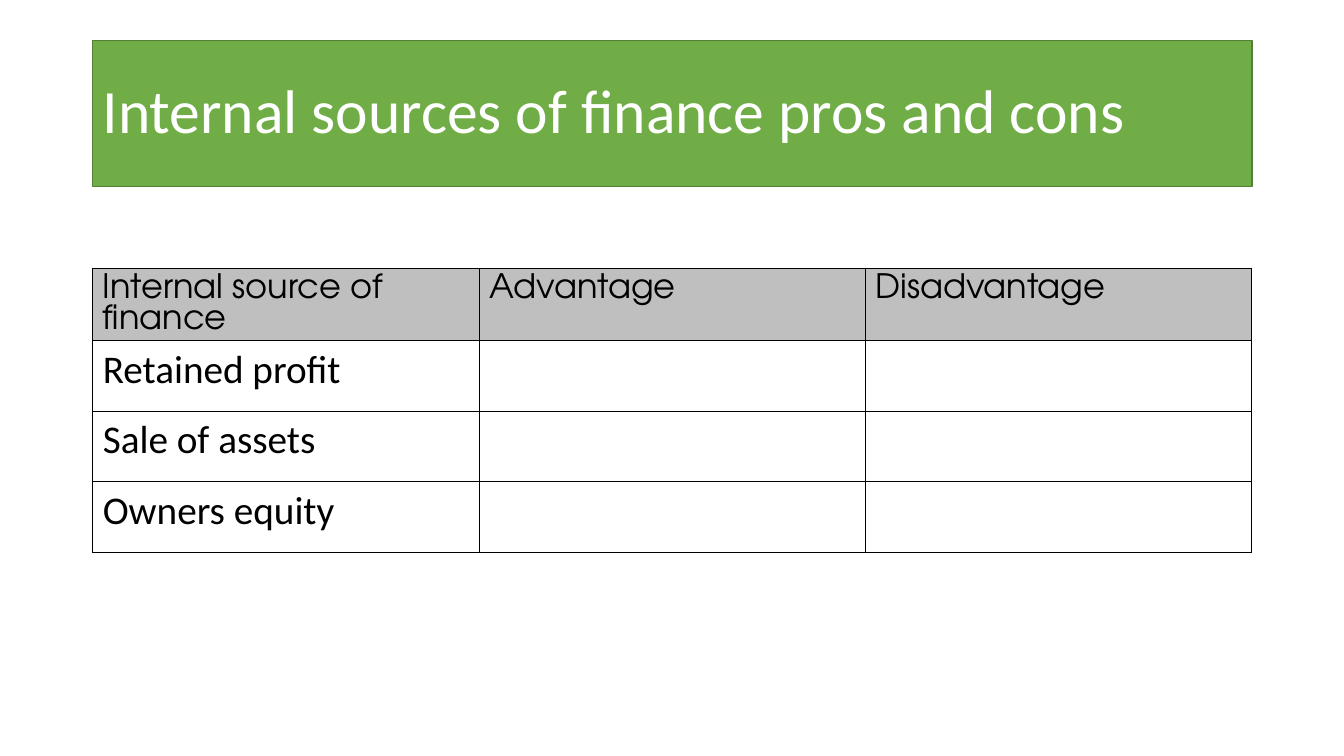
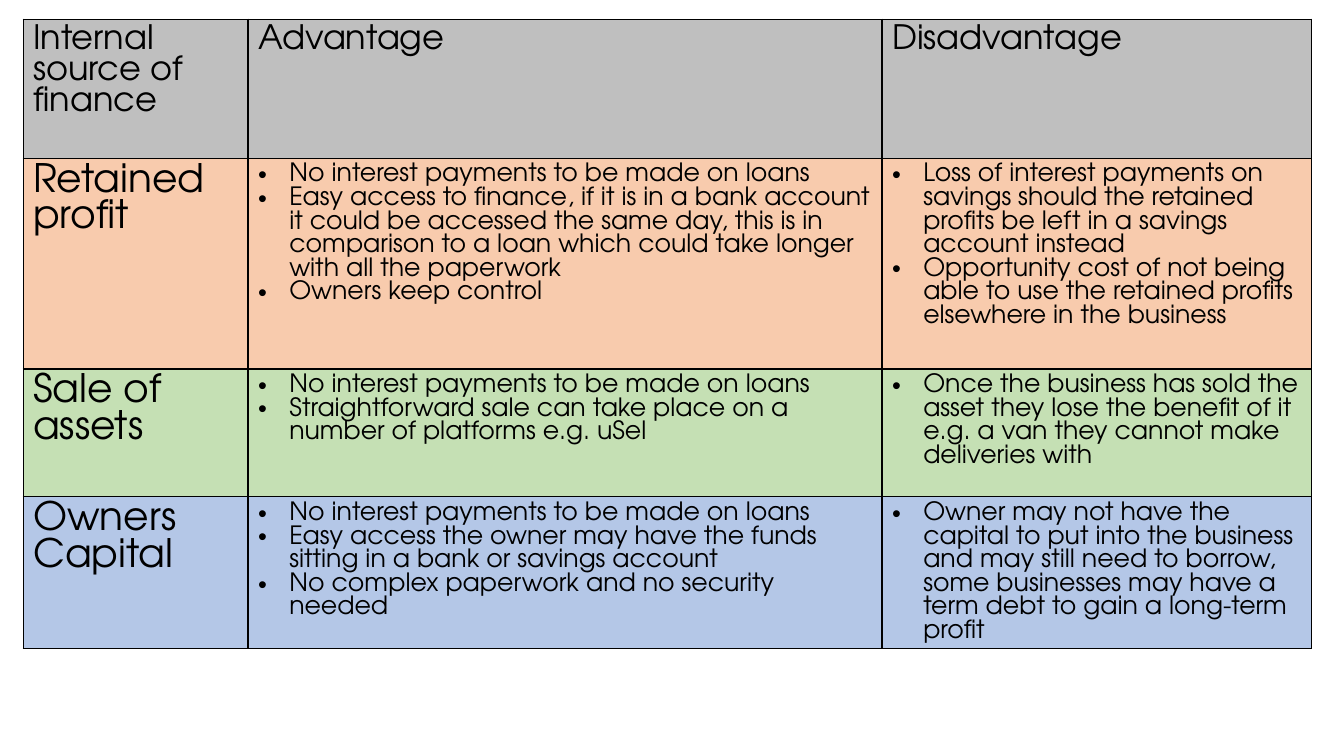
from lxml import etree
from pptx import Presentation
from pptx.dml.color import RGBColor
from pptx.enum import shapes, text
from pptx.oxml import ns
from pptx.util import Inches, Pt

GREEN = RGBColor(0x70, 0xAD, 0x47)
EDGE = RGBColor(0x53, 0x80, 0x35)
WHITE = RGBColor(0xFF, 0xFF, 0xFF)
BLACK = RGBColor(0x00, 0x00, 0x00)
GREY = RGBColor(0xBF, 0xBF, 0xBF)
PEACH = RGBColor(0xF8, 0xCB, 0xAD)
LIME = RGBColor(0xC5, 0xE0, 0xB4)
BLUE = RGBColor(0xB4, 0xC7, 0xE7)
PLAIN = "Calibri"
ROUND = "TeX Gyre Adventor"
HEAD = ["Internal source of finance", "Advantage", "Disadvantage"]
FREE = "No interest payments to be made on loans"


def write(para, words, size, font, color=BLACK):
    run = para.add_run()
    run.text = words
    run.font.size = Pt(size)
    run.font.name = font
    run.font.color.rgb = color


def grid(slide, left, top, cols, highs, rows, fills, font):
    """Add a bordered table; a list in a cell becomes bullets."""
    frame = slide.shapes.add_table(len(rows), len(cols), Inches(left), Inches(top),
                                   Inches(sum(cols)), Inches(sum(highs)))
    table = frame.table
    table.first_row = table.horz_banding = False
    for col, wide in zip(table.columns, cols):
        col.width = Inches(wide)
    for r, (row, high, fill) in enumerate(zip(rows, highs, fills)):
        table.rows[r].height = Inches(high)
        for c, item in enumerate(row):
            cell = table.cell(r, c)
            props = cell._tc.get_or_add_tcPr()
            for side in ("lnL", "lnR", "lnT", "lnB"):
                line = etree.SubElement(props, ns.qn("a:" + side), w=str(Pt(1)))
                paint = etree.SubElement(line, ns.qn("a:solidFill"))
                etree.SubElement(paint, ns.qn("a:srgbClr"), val=str(BLACK))
            cell.fill.solid()
            cell.fill.fore_color.rgb = fill
            body = cell.text_frame
            if isinstance(item, str):
                write(body.paragraphs[0], item, 28 if r else 24, font if r else ROUND)
                continue
            for n, words in enumerate(item):
                para = body.add_paragraph() if n else body.paragraphs[0]
                style = para._p.get_or_add_pPr()
                style.set("marL", str(Inches(0.31)))
                style.set("indent", str(-Inches(0.31)))
                etree.SubElement(style, ns.qn("a:buFont"), typeface="Arial")
                etree.SubElement(style, ns.qn("a:buChar"), char="•")
                write(para, words, 18, font)


deck = Presentation()
deck.slide_width = Inches(40 / 3)
deck.slide_height = Inches(7.5)
blank = deck.slide_layouts[6]

# Slide 1: table to fill in
slide = deck.slides.add_slide(blank)
title = slide.shapes.add_shape(shapes.MSO_SHAPE.RECTANGLE, Inches(0.92), Inches(0.4),
                               Inches(11.5), Inches(1.45))
title.shadow.inherit = False
title.fill.solid()
title.fill.fore_color.rgb = GREEN
title.line.color.rgb = EDGE
title.line.width = Pt(1)
title.text_frame.word_wrap = True
title.text_frame.vertical_anchor = text.MSO_ANCHOR.MIDDLE
para = title.text_frame.paragraphs[0]
para.alignment = text.PP_ALIGN.LEFT
para.line_spacing = 0.9
write(para, "Internal sources of finance pros and cons", 44, PLAIN, WHITE)

names = ["Retained profit", "Sale of assets", "Owners equity"]
grid(slide, 0.92, 2.66, [11.5 / 3] * 3, [0.7] * 4,
     [HEAD] + [[name, [], []] for name in names], [GREY] + [WHITE] * 3, PLAIN)

# Slide 2: completed table
slide = deck.slides.add_slide(blank)
rows = [
    HEAD,
    ["Retained profit",
     [FREE,
      "Easy access to finance, if it is in a bank account it could be accessed the same day, "
      "this is in comparison to a loan which could take longer with all the paperwork",
      "Owners keep control"],
     ["Loss of interest payments on savings should the retained profits be left in a "
      "savings account instead",
      "Opportunity cost of not being able to use the retained profits elsewhere in the "
      "business"]],
    ["Sale of assets",
     [FREE,
      "Straightforward sale can take place on a number of platforms e.g. uSel"],
     ["Once the business has sold the asset they lose the benefit of it e.g. a van they "
      "cannot make deliveries with"]],
    ["Owners Capital",
     [FREE,
      "Easy access the owner may have the funds sitting in a bank or savings account",
      "No complex paperwork and no security needed"],
     ["Owner may not have the capital to put into the business and may still need to borrow, "
      "some businesses may have a term debt to gain a long-term profit"]],
]
grid(slide, 0.23, 0.19, [2.23, 6.29, 4.26], [1.38, 2.09, 1.27, 1.27], rows,
     [GREY, PEACH, LIME, BLUE], ROUND)

deck.save("out.pptx")
